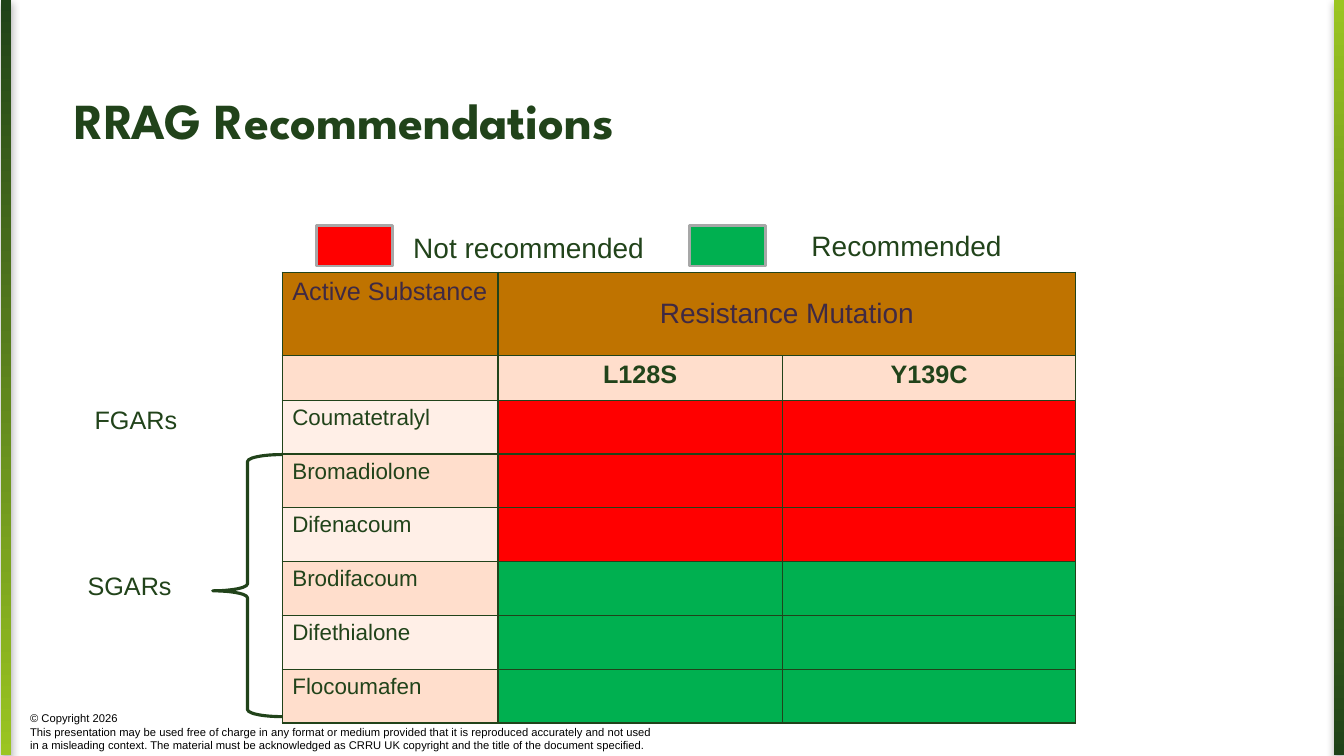
import lxml.etree
import pptx
import pptx.dml.color
import pptx.enum.shapes
import pptx.enum.text
import pptx.oxml
import pptx.oxml.ns
import pptx.util

DARK_GREEN, LIME, RED, GREEN = "21431A", "9BC521", "FF0000", "00B050"
BROWN, PEACH, PALE_PEACH = "BF7300", "FFDECC", "FFEFE7"
RECTANGLE = pptx.enum.shapes.MSO_SHAPE.RECTANGLE
LEFT = pptx.enum.text.PP_ALIGN.LEFT
CENTER = pptx.enum.text.PP_ALIGN.CENTER


def paint(color_format, hex_color):
    color_format.rgb = pptx.dml.color.RGBColor.from_string(hex_color)


def write(frame, lines, size, color=DARK_GREEN, bold=False, font="Arial", align=LEFT):
    for number, line in enumerate(lines):
        paragraph = frame.add_paragraph() if number else frame.paragraphs[0]
        paragraph.alignment = align
        run = paragraph.add_run()
        run.text = line
        run.font.size = pptx.util.Pt(size)
        run.font.name = font
        run.font.bold = bold
        paint(run.font.color, color)


# Slide, laid out on a grid of tenth-inch columns and rows
deck = pptx.Presentation()
deck.slide_width = pptx.util.Inches(13.33)
deck.slide_height = pptx.util.Inches(7.5)
slide = deck.slides.add_slide(deck.slide_layouts[6])
shapes = slide.shapes
unit = pptx.util.Inches(0.1)

# Gradient bars along both edges
for column, angle in ((132.3, 90), (0.1, 270)):
    edge_bar = shapes.add_shape(RECTANGLE, int(column * unit), int(-0.1 * unit),
                                unit, 75 * unit)
    edge_bar.rotation = 180
    edge_bar.line.fill.background()
    edge_bar.fill.gradient()
    edge_bar.fill.gradient_angle = angle
    for stop, color in zip(edge_bar.fill.gradient_stops, (LIME, "1F4219")):
        paint(stop.color, color)
    edge_bar.shadow.inherit = False
    effects = edge_bar._element.spPr.find(pptx.oxml.ns.qn("a:effectLst"))
    effects.append(pptx.oxml.parse_xml(
        f'<a:outerShdw {pptx.oxml.ns.nsdecls("a")} blurRad="76200" dist="38100" '
        'dir="5400000" rotWithShape="0"><a:srgbClr val="000000">'
        '<a:alpha val="35000"/></a:srgbClr></a:outerShdw>'))

# Title
title = shapes.add_textbox(*(int(n * unit) for n in (6.9, 8.3, 87.7, 7.1))).text_frame
title.word_wrap = True
title.margin_left = title.margin_right = unit // 2
title.margin_top = title.margin_bottom = unit // 2
write(title, ["RRAG Recommendations"], 36, bold=True, font="League Spartan")

# Copyright, legend labels and group labels
labels = [
    ((2, 70.1, 128.9, 5), 8, "000000", [
        "© Copyright 2026",
        "This presentation may be used free of charge in any format or medium "
        "provided that it is reproduced accurately and not used",
        "in a misleading context. The material must be acknowledged as CRRU UK "
        "copyright and the title of the document specified."]),
    ((40, 22.4, 31.9, 4.4), 20, DARK_GREEN, ["Not recommended"]),
    ((79.5, 22.2, 22.4, 4.4), 20, DARK_GREEN, ["Recommended"]),
    ((8.4, 39.6, 17.8, 5), 18, DARK_GREEN, ["FGARs"]),
    ((7.7, 56.1, 17.8, 5), 18, DARK_GREEN, ["SGARs"]),
]
for place, size, color, lines in labels:
    label = shapes.add_textbox(*(int(n * unit) for n in place)).text_frame
    label.word_wrap = True
    write(label, lines, size, color)

# Recommendation table
column_widths = (21.4, 28.2, 29.1)
row_heights = [8.3, 4.4] + [5.34] * 6
substances = ["Coumatetralyl", "Bromadiolone", "Difenacoum",
              "Brodifacoum", "Difethialone", "Flocoumafen"]
table = shapes.add_table(len(row_heights), len(column_widths), 28 * unit, 27 * unit,
                         int(sum(column_widths) * unit),
                         int(sum(row_heights) * unit)).table
for column, width in zip(table.columns, column_widths):
    column.width = int(width * unit)
for row, height in zip(table.rows, row_heights):
    row.height = int(height * unit)

# Header rows
table.cell(0, 1).merge(table.cell(0, 2))
write(table.cell(0, 0).text_frame, ["Active Substance"], 18, "3F2943")
write(table.cell(0, 1).text_frame, ["Resistance Mutation"], 20, "3F2943", align=CENTER)
table.cell(0, 1).vertical_anchor = pptx.enum.text.MSO_ANCHOR.MIDDLE
for column, mutation in enumerate(("L128S", "Y139C"), start=1):
    write(table.cell(1, column).text_frame, [mutation], 18, bold=True, align=CENTER)
fills = [[BROWN] * 3, [PEACH] * 3]

# Substance rows: the first three are not recommended
for number, substance in enumerate(substances):
    write(table.cell(number + 2, 0).text_frame, [substance], 16)
    verdict = RED if number < 3 else GREEN
    fills.append([PEACH if number % 2 else PALE_PEACH, verdict, verdict])

# Cell fills and borders
for row, row_fills in zip(table.rows, fills):
    for cell, color in zip(row.cells, row_fills):
        cell.fill.solid()
        paint(cell.fill.fore_color, color)
        properties = cell._tc.get_or_add_tcPr()
        for position, side in enumerate(("lnL", "lnR", "lnT", "lnB")):
            properties.insert(position, pptx.oxml.parse_xml(
                f'<a:{side} {pptx.oxml.ns.nsdecls("a")} w="12700"><a:solidFill>'
                f'<a:srgbClr val="{DARK_GREEN}"/></a:solidFill></a:{side}>'))

# Legend swatches
for column, color in ((31.4, RED), (68.4, GREEN)):
    swatch = shapes.add_shape(RECTANGLE, int(column * unit), int(22.4 * unit),
                              int(7.5 * unit), 4 * unit)
    swatch.shadow.inherit = False
    swatch.fill.solid()
    paint(swatch.fill.fore_color, color)
    paint(swatch.line.color, "A7A7A7")
    swatch.line.width = pptx.util.Pt(2)

# Brace gathering the SGAR rows
sgar_brace = shapes.add_shape(pptx.enum.shapes.MSO_SHAPE.LEFT_BRACE,
                              *(int(n * unit) for n in (21.1, 45.1, 6.9, 26)))
sgar_brace.adjustments[0] = 0.1
sgar_brace.adjustments[1] = 0.52
sgar_brace.shadow.inherit = False
sgar_brace.fill.background()
paint(sgar_brace.line.color, DARK_GREEN)
sgar_brace.line.width = pptx.util.Pt(2.25)

deck.save("out.pptx")
